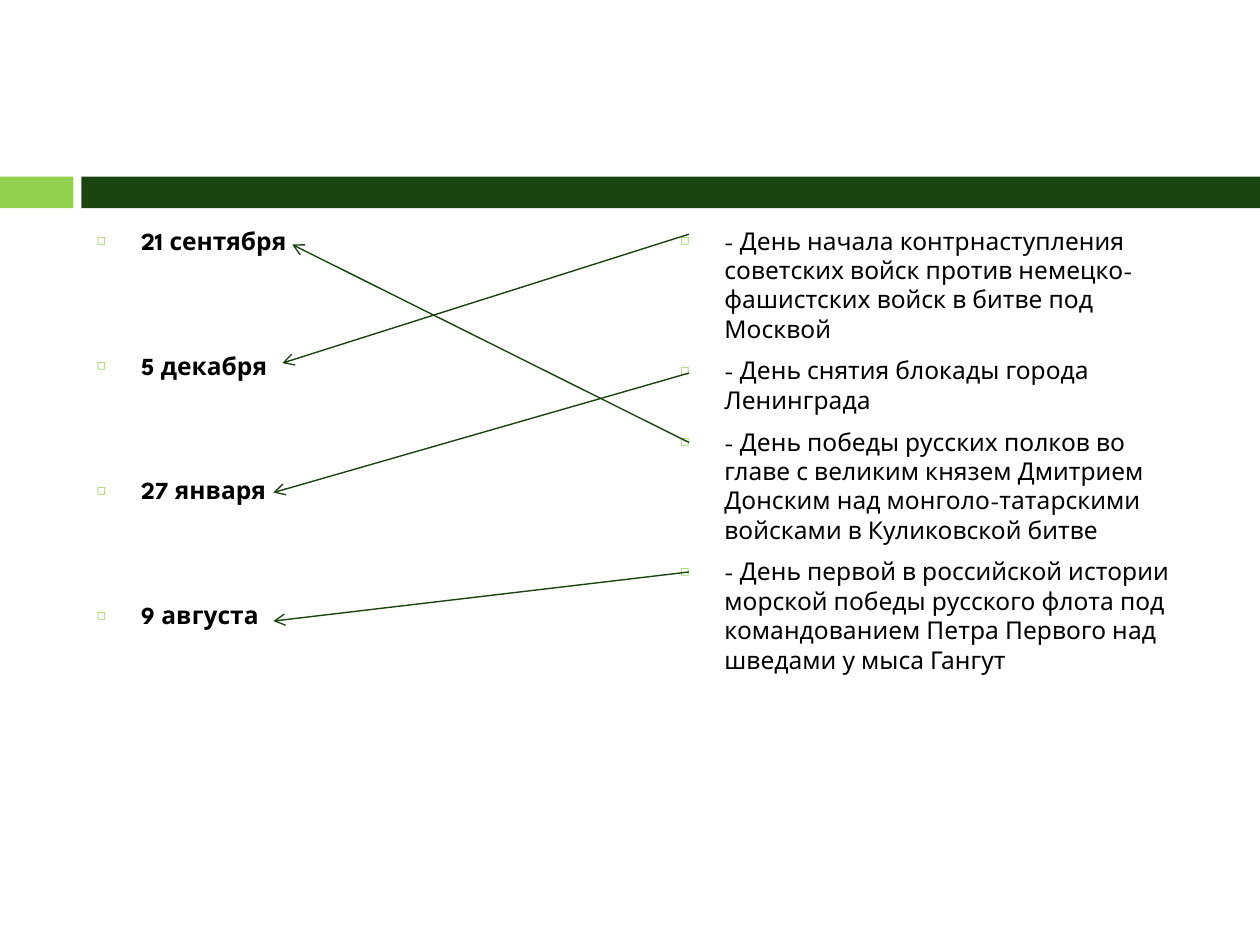
from lxml.etree import SubElement
from pptx import Presentation
from pptx.dml.color import RGBColor
from pptx.enum.shapes import MSO_CONNECTOR as Connector, MSO_SHAPE as Shape
from pptx.enum.text import MSO_ANCHOR as Anchor, MSO_AUTO_SIZE as AutoSize
from pptx.oxml.ns import qn
from pptx.util import Cm, Pt

# Content
DATES = ["21 сентября", "5 декабря", "27 января", "9 августа"]
EVENTS = [
    "- День начала контрнаступления советских войск против "
    "немецко-фашистских войск в битве под Москвой",
    "- День снятия блокады города Ленинграда",
    "- День победы русских полков во главе с великим князем Дмитрием "
    "Донским над монголо-татарскими войсками в Куликовской битве",
    "- День первой в российской истории морской победы русского флота "
    "под командованием Петра Первого над шведами у мыса Гангут",
]
# Answers, one per date: event height, then the arrow tip beside the date (cm)
ANSWERS = [
    (8.92, (5.89, 4.93)),
    (4.72, (5.69, 7.32)),
    (7.52, (5.51, 9.93)),
    (11.53, (5.51, 12.52)),
]
EVENT_EDGE = 13.89

THEME = {
    "font": "League Spartan",
    "size": Pt(14),
    "text": RGBColor(0, 0, 0),
    "dark": RGBColor(0x1A, 0x44, 0x10),
    "accent": RGBColor(0x92, 0xD0, 0x50),
    "line": Pt(0.79),
    "event_gap": Pt(7),
    "date_gap": Pt(54.6),
    "indent": Cm(0.89),
}


def add_bar(slide, left, width, color):
    bar = slide.shapes.add_shape(Shape.RECTANGLE, Cm(left), Cm(3.56), Cm(width), Cm(0.64))
    bar.shadow.inherit = False
    bar.fill.solid()
    bar.fill.fore_color.rgb = color
    bar.line.fill.background()


def add_bullet(paragraph):
    props = paragraph._p.get_or_add_pPr()
    props.set("marL", str(THEME["indent"]))
    props.set("indent", str(-THEME["indent"]))
    color = SubElement(props, qn("a:buClr"))
    SubElement(color, qn("a:srgbClr"), val=str(THEME["accent"]))
    SubElement(props, qn("a:buSzPct"), val="60000")
    SubElement(props, qn("a:buChar"), char="◻")


def fill_column(column, items, left, height, gap, bold):
    column.left, column.top = Cm(left), Cm(4.42)
    column.width, column.height = Cm(10.8), Cm(height)
    frame = column.text_frame
    frame.word_wrap = True
    frame.auto_size = AutoSize.NONE
    frame.vertical_anchor = Anchor.TOP
    for index, item in enumerate(items):
        paragraph = frame.add_paragraph() if index else frame.paragraphs[0]
        paragraph.space_before = gap if index else Pt(0)
        add_bullet(paragraph)
        run = paragraph.add_run()
        run.text = item
        run.font.name, run.font.size = THEME["font"], THEME["size"]
        run.font.bold = bold
        run.font.color.rgb = THEME["text"]


def add_answer(slide, event_y, tip):
    ends = [Cm(value) for value in (EVENT_EDGE, event_y, *tip)]
    arrow = slide.shapes.add_connector(Connector.STRAIGHT, *ends)
    arrow.line.color.rgb = THEME["dark"]
    arrow.line.width = THEME["line"]
    SubElement(arrow.line._get_or_add_ln(), qn("a:tailEnd"), type="arrow")
    SubElement(arrow._element.spPr, qn("a:effectLst"))


def main():
    deck = Presentation()
    deck.slide_width, deck.slide_height = Cm(25.4), Cm(19.05)
    slide = deck.slides.add_slide(deck.slide_layouts[3])
    title, dates, events = slide.placeholders
    title._element.getparent().remove(title._element)

    # Divider bars
    add_bar(slide, 0, 1.48, THEME["accent"])
    add_bar(slide, 1.64, 23.76, THEME["dark"])

    # Dates and events to be matched
    fill_column(dates, DATES, 1.7, 12.7, THEME["date_gap"], True)
    fill_column(events, EVENTS, 13.46, 13.31, THEME["event_gap"], False)

    # Arrows from each event to its date
    for event_y, tip in ANSWERS:
        add_answer(slide, event_y, tip)

    deck.save("out.pptx")


if __name__ == "__main__":
    main()
